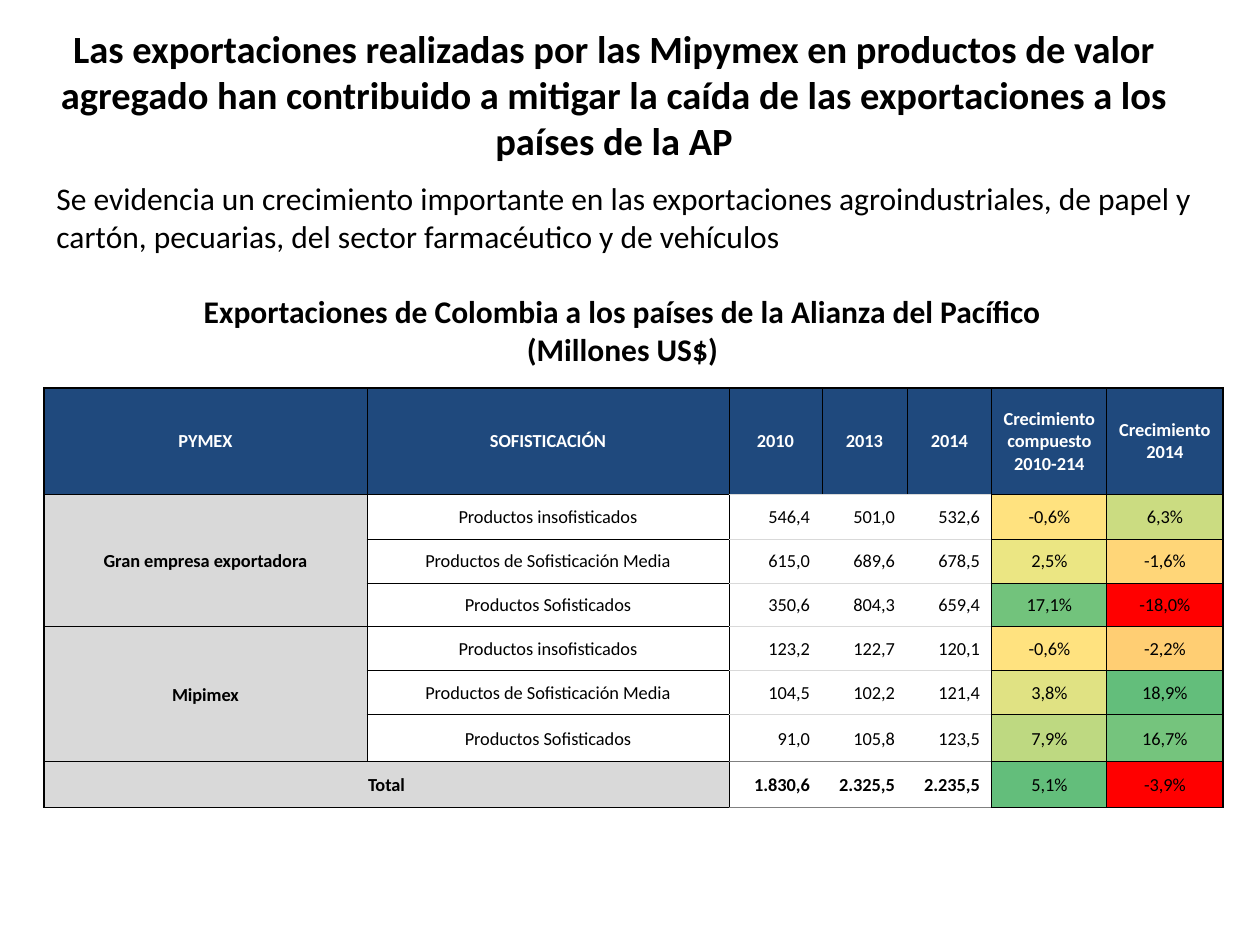
import pptx
import pptx.util
import pptx.dml.color
import pptx.enum.text
import pptx.oxml.ns
from lxml import etree

PX = 914400 / 126  # EMU per px
ALIGN = pptx.enum.text.PP_ALIGN
MIDDLE = pptx.enum.text.MSO_ANCHOR.MIDDLE
NUMBER_COLS = (2, 3, 4)
TOTAL_ROW = 7
BLACK, GREY, LIGHT, NAVY = "000000", "808080", "D9D9D9", "1F497D"

COL_WIDTHS = [323, 362, 93, 85, 85, 115, 116]
ROW_HEIGHTS = [106, 45, 44, 44, 44, 44, 47, 46]
ROWS = [
    ["PYMEX", "SOFISTICACIÓN", "2010", "2013", "2014",
     "Crecimiento compuesto 2010-214", "Crecimiento 2014"],
    ["Gran empresa exportadora", "Productos insofisticados",
     "546,4", "501,0", "532,6", "-0,6%", "6,3%"],
    ["", "Productos de Sofisticación Media",
     "615,0", "689,6", "678,5", "2,5%", "-1,6%"],
    ["", "Productos Sofisticados",
     "350,6", "804,3", "659,4", "17,1%", "-18,0%"],
    ["Mipimex", "Productos insofisticados",
     "123,2", "122,7", "120,1", "-0,6%", "-2,2%"],
    ["", "Productos de Sofisticación Media",
     "104,5", "102,2", "121,4", "3,8%", "18,9%"],
    ["", "Productos Sofisticados",
     "91,0", "105,8", "123,5", "7,9%", "16,7%"],
    ["Total", "", "1.830,6", "2.325,5", "2.235,5", "5,1%", "-3,9%"],
]
# Heat-map fills of the two growth columns, one pair per data row
GROWTH_FILLS = [
    ("FFE27F", "CBDC81"), ("EBE683", "FFD678"), ("72C37C", "FF0000"),
    ("FFE27F", "FFCE73"), ("E0E283", "63BE7B"), ("BED981", "75C47D"),
    ("63BE7B", "FF0000"),
]
# First and last cell of each merged area
MERGES = [((1, 0), (3, 0)), ((4, 0), (6, 0)), ((7, 0), (7, 1))]


def px(n):
    return pptx.util.Emu(round(n * PX))


def rgb(value):
    return pptx.dml.color.RGBColor.from_string(value)


def format_text(tf, size, color=BLACK, bold=False, align=ALIGN.LEFT):
    for p in tf.paragraphs:
        p.alignment = align
        for r in p.runs:
            r.font.name = "Calibri"
            r.font.size = pptx.util.Pt(size)
            r.font.bold = bold
            r.font.color.rgb = rgb(color)


def add_title(s, text):
    sp = s.shapes.title
    sp.left, sp.top, sp.width, sp.height = px(21), px(15), px(1186), px(158)
    tf = sp.text_frame
    tf.text = text
    tf.auto_size = pptx.enum.text.MSO_AUTO_SIZE.NONE
    tf.vertical_anchor = MIDDLE
    tf.margin_left = tf.margin_right = px(9)
    tf.margin_top = tf.margin_bottom = px(5)
    format_text(tf, 22, bold=True, align=ALIGN.CENTER)


def add_text(s, text, x, y, w, h, wrap=True, **style):
    tf = s.shapes.add_textbox(px(x), px(y), px(w), px(h)).text_frame
    tf.word_wrap = wrap
    tf.text = text
    format_text(tf, 18, **style)


def cell_borders(row, col):
    """Colour and width of each side; None means no line."""
    thin = (BLACK, 0.5)
    sides = {"L": thin, "R": thin, "T": thin, "B": thin}
    if col in NUMBER_COLS:
        if row > 0:
            sides["T"] = (GREY, 1) if row == TOTAL_ROW else (LIGHT, 0.5)
            sides["B"] = (GREY, 1) if row >= TOTAL_ROW - 1 else (LIGHT, 0.5)
            sides["L"] = thin if col == NUMBER_COLS[0] else None
            sides["R"] = thin if col == NUMBER_COLS[-1] else None
        else:
            sides["B"] = (LIGHT, 0.5)
    elif row == TOTAL_ROW and col > NUMBER_COLS[-1]:
        sides["B"] = (BLACK, 1)
    # Heavier outer frame
    if row == 0:
        sides["T"] = (BLACK, 1)
    if col == 0:
        sides["L"] = (BLACK, 1)
    if col == len(COL_WIDTHS) - 1:
        sides["R"] = (BLACK, 1)
    return sides


def set_borders(cell, sides):
    qn = pptx.oxml.ns.qn
    tc_pr = cell._tc.get_or_add_tcPr()
    for side, line in sides.items():
        ln = etree.SubElement(tc_pr, qn(f"a:ln{side}"))
        if line is None:
            etree.SubElement(ln, qn("a:noFill"))
            continue
        color, width = line
        ln.set("w", str(pptx.util.Pt(width)))
        fill = etree.SubElement(ln, qn("a:solidFill"))
        etree.SubElement(fill, qn("a:srgbClr"), val=color)


def cell_fill(row, col):
    if row == 0:
        return NAVY
    if col > NUMBER_COLS[-1]:
        return GROWTH_FILLS[row - 1][col - NUMBER_COLS[-1] - 1]
    if col == 0 or (row == TOTAL_ROW and col == 1):
        return LIGHT
    return None


def format_cell(cell, row, col):
    is_number = row > 0 and col in NUMBER_COLS
    cell.vertical_anchor = MIDDLE
    cell.margin_left = cell.margin_top = px(1)
    cell.margin_right = px(12 if is_number else 1)
    cell.margin_bottom = 0
    set_borders(cell, cell_borders(row, col))
    fill = cell_fill(row, col)
    if fill:
        cell.fill.solid()
        cell.fill.fore_color.rgb = rgb(fill)
    else:
        cell.fill.background()
    format_text(
        cell.text_frame, 10.5,
        color="FFFFFF" if row == 0 else BLACK,
        bold=row == 0 or col == 0 or (row == TOTAL_ROW and is_number),
        align=ALIGN.RIGHT if is_number else ALIGN.CENTER)


def add_export_table(s, x, y):
    table = s.shapes.add_table(
        len(ROWS), len(COL_WIDTHS), px(x), px(y),
        px(sum(COL_WIDTHS)), px(sum(ROW_HEIGHTS))).table
    table.first_row = table.horz_banding = False
    for column, width in zip(table.columns, COL_WIDTHS):
        column.width = px(width)
    for table_row, height in zip(table.rows, ROW_HEIGHTS):
        table_row.height = px(height)
    for row, values in enumerate(ROWS):
        for col, value in enumerate(values):
            cell = table.cell(row, col)
            cell.text = value
            format_cell(cell, row, col)
    for first, last in MERGES:
        table.cell(*first).merge(table.cell(*last))


def main():
    prs = pptx.Presentation()
    prs.slide_width, prs.slide_height = px(1260), px(945)
    s = prs.slides.add_slide(prs.slide_layouts[5])

    # Headline and key message
    add_title(s, "Las exportaciones realizadas por las Mipymex en productos de "
                 "valor agregado han contribuido a mitigar la caída de las "
                 "exportaciones a los países de la AP")
    add_text(s, "Se evidencia un crecimiento importante en las exportaciones "
                "agroindustriales, de papel y cartón, pecuarias, del sector "
                "farmacéutico y de vehículos", 44, 173, 1191, 89)

    # Table with its caption
    add_text(s, "Exportaciones de Colombia a los países de la Alianza del "
                "Pacífico\n(Millones US$)", 184, 286, 877, 89,
             wrap=False, bold=True, align=ALIGN.CENTER)
    add_export_table(s, 44, 388)

    prs.save("out.pptx")


if __name__ == "__main__":
    main()
